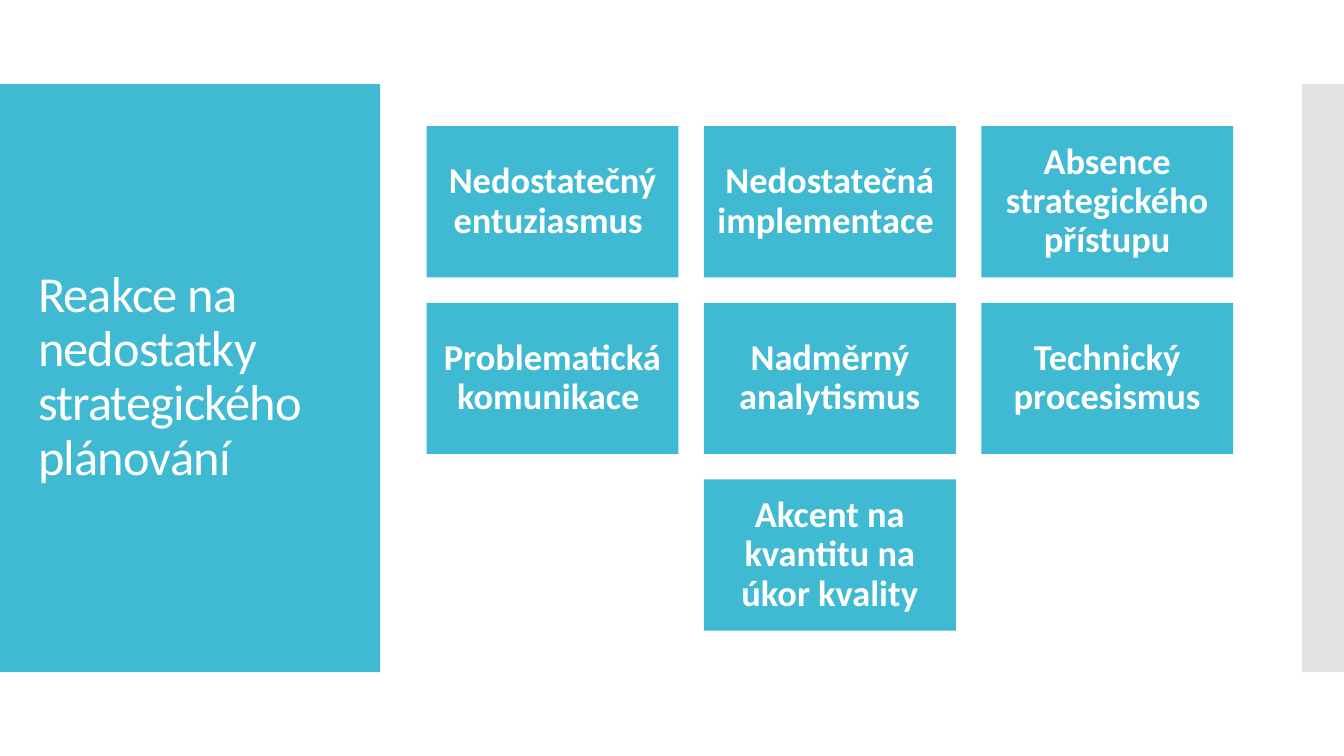
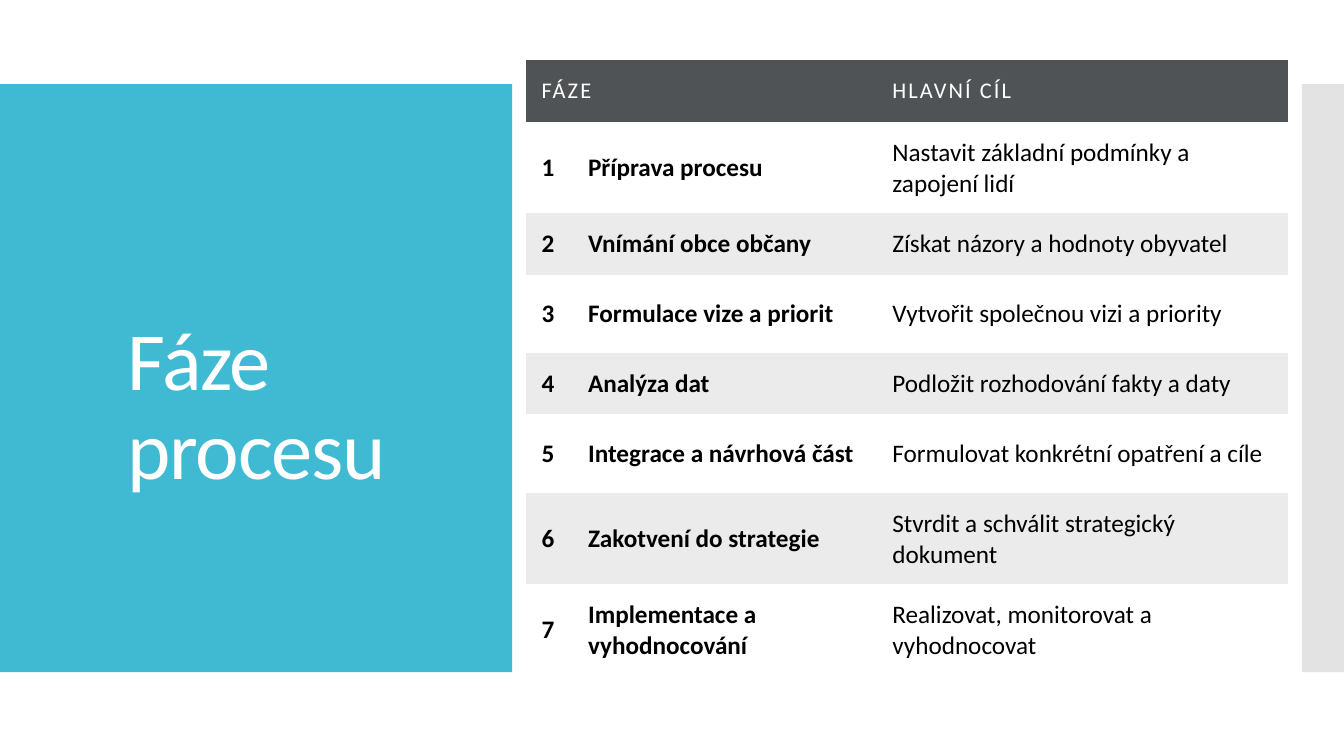
from pptx import Presentation
from pptx.dml.color import RGBColor
from pptx.enum.shapes import MSO_SHAPE
from pptx.enum.text import MSO_ANCHOR, PP_ALIGN
from pptx.util import Cm, Pt

# Content
CARDS_TITLE = "Reakce na nedostatky strategického plánování"
CARDS = [
    "Nedostatečný entuziasmus ",
    "Nedostatečná implementace ",
    "Absence strategického přístupu",
    "Problematická komunikace ",
    "Nadměrný analytismus",
    "Technický procesismus",
    "Akcent na kvantitu na úkor kvality",
]
PHASES_TITLE = "Fáze procesu"
HEADER = ("FÁZE", "HLAVNÍ CÍL")
PHASES = [
    ("Příprava procesu", "Nastavit základní podmínky a zapojení lidí"),
    ("Vnímání obce občany", "Získat názory a hodnoty obyvatel"),
    ("Formulace vize a priorit", "Vytvořit společnou vizi a priority"),
    ("Analýza dat", "Podložit rozhodování fakty a daty"),
    ("Integrace a návrhová část", "Formulovat konkrétní opatření a cíle"),
    ("Zakotvení do strategie", "Stvrdit a schválit strategický dokument"),
    ("Implementace a vyhodnocování", "Realizovat, monitorovat a vyhodnocovat"),
]

# Shared style
FONT = "Calibri"
TEAL, GREY, DARK = "40BAD2", "E3E3E3", "505356"
WHITE, BLACK, STRIPE = "FFFFFF", "000000", "EBEBEB"
WIDTH, HEIGHT = 33.87, 19.05
BAND_TOP, BAND_HEIGHT, EDGE_WIDTH = 2.12, 14.82, 1.06
NO_TABLE_STYLE = "{2D5ABB26-0587-4C30-8999-92F81FD0307C}"


def rgb(value):
    return RGBColor.from_string(value)


def write(tf, text, size, color, bold=False, tracking=0):
    tf.text = text
    p = tf.paragraphs[0]
    for r in p.runs:
        r.font.name = FONT
        r.font.size = Pt(size)
        r.font.bold = bold
        r.font.color.rgb = rgb(color)
        if tracking:
            r._r.get_or_add_rPr().set("spc", str(round(tracking * 100)))
    return p


def add_block(s, left, top, width, height, color):
    sp = s.shapes.add_shape(MSO_SHAPE.RECTANGLE, Cm(left), Cm(top), Cm(width), Cm(height))
    sp.shadow.inherit = False
    sp.fill.solid()
    sp.fill.fore_color.rgb = rgb(color)
    sp.line.fill.background()
    return sp


def add_slide(prs, panel_width, title, box, size, tracking, anchor):
    s = prs.slides.add_slide(prs.slide_layouts[6])
    add_block(s, 0, BAND_TOP, panel_width, BAND_HEIGHT, TEAL)
    add_block(s, WIDTH - EDGE_WIDTH, BAND_TOP, EDGE_WIDTH, BAND_HEIGHT, GREY)
    tf = s.shapes.add_textbox(*map(Cm, box)).text_frame
    tf.word_wrap = True
    tf.vertical_anchor = anchor
    write(tf, title, size, WHITE, tracking=tracking).line_spacing = 0.9
    return s


def set_margins(target, margin):
    target.margin_left = target.margin_right = Cm(margin)
    target.margin_top = target.margin_bottom = Cm(margin)


def add_cards(s, cards, left=10.75, top=3.18, width=6.35, height=3.81, gap=0.64, per_row=3):
    for i, text in enumerate(cards):
        row, col = divmod(i, per_row)
        in_row = min(per_row, len(cards) - row * per_row)
        col += (per_row - in_row) / 2  # a short last row is centred
        sp = add_block(s, left + col * (width + gap), top + row * (height + gap),
                       width, height, TEAL)
        tf = sp.text_frame
        tf.word_wrap = True
        tf.vertical_anchor = MSO_ANCHOR.MIDDLE
        set_margins(tf, 0.28)
        p = write(tf, text, 26, WHITE, bold=True)
        p.alignment = PP_ALIGN.CENTER
        p.line_spacing = 0.9


def add_phases(s, left=13.26, top=1.5, widths=(1.17, 7.67, 10.36)):
    heights = [1.57] + [1.45 if i % 2 else 1.98 for i in range(len(PHASES))]
    frame = s.shapes.add_table(len(heights), len(widths), Cm(left), Cm(top),
                               Cm(sum(widths)), Cm(sum(heights)))
    table = frame.table
    table.horz_banding = False
    table._tbl.tblPr.find("{*}tableStyleId").text = NO_TABLE_STYLE
    for column, width in zip(table.columns, widths):
        column.width = Cm(width)
    for row, height in zip(table.rows, heights):
        row.height = Cm(height)

    # Header spans the number and name columns
    table.cell(0, 0).merge(table.cell(0, 1))
    rows = [(HEADER[0], "", HEADER[1])]
    rows += [(str(n), *phase) for n, phase in enumerate(PHASES, 1)]
    for i, texts in enumerate(rows):
        fill = DARK if i == 0 else WHITE if i % 2 else STRIPE
        for j, text in enumerate(texts):
            cell = table.cell(i, j)
            cell.fill.solid()
            cell.fill.fore_color.rgb = rgb(fill)
            cell.vertical_anchor = MSO_ANCHOR.MIDDLE
            set_margins(cell, 0.39)
            if cell.is_spanned:
                continue
            if i == 0:
                write(cell.text_frame, text, 16, WHITE, tracking=1.5)
            else:
                write(cell.text_frame, text, 18, BLACK, bold=j < 2)


def main():
    prs = Presentation()
    prs.slide_width, prs.slide_height = Cm(WIDTH), Cm(HEIGHT)

    # Slide 1: cards
    s = add_slide(prs, 9.58, CARDS_TITLE, (0.71, 3.12, 8.18, 12.78), 36, -0.6,
                  MSO_ANCHOR.MIDDLE)
    add_cards(s, CARDS)

    # Slide 2: table of phases
    s = add_slide(prs, 12.91, PHASES_TITLE, (2.97, 3.61, 9.04, 9.04), 59, -1,
                  MSO_ANCHOR.BOTTOM)
    add_phases(s)

    prs.save("out.pptx")


if __name__ == "__main__":
    main()
